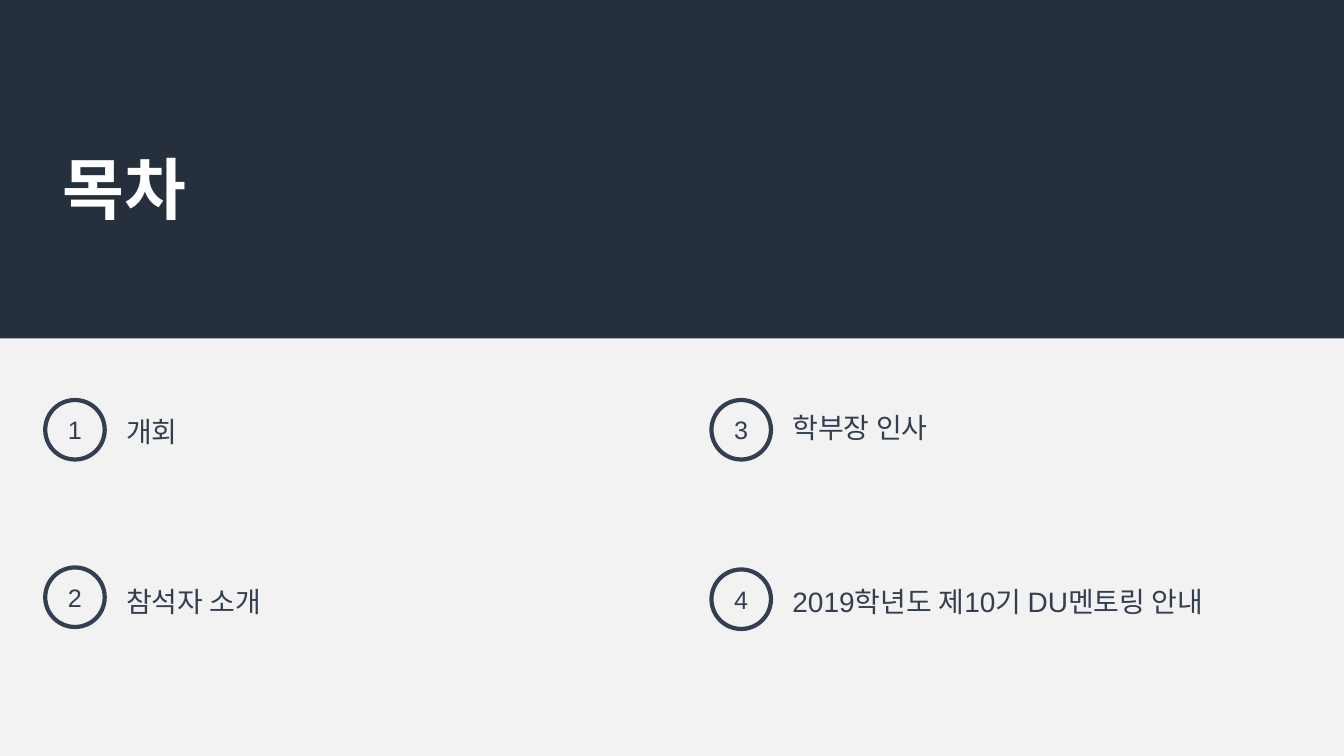
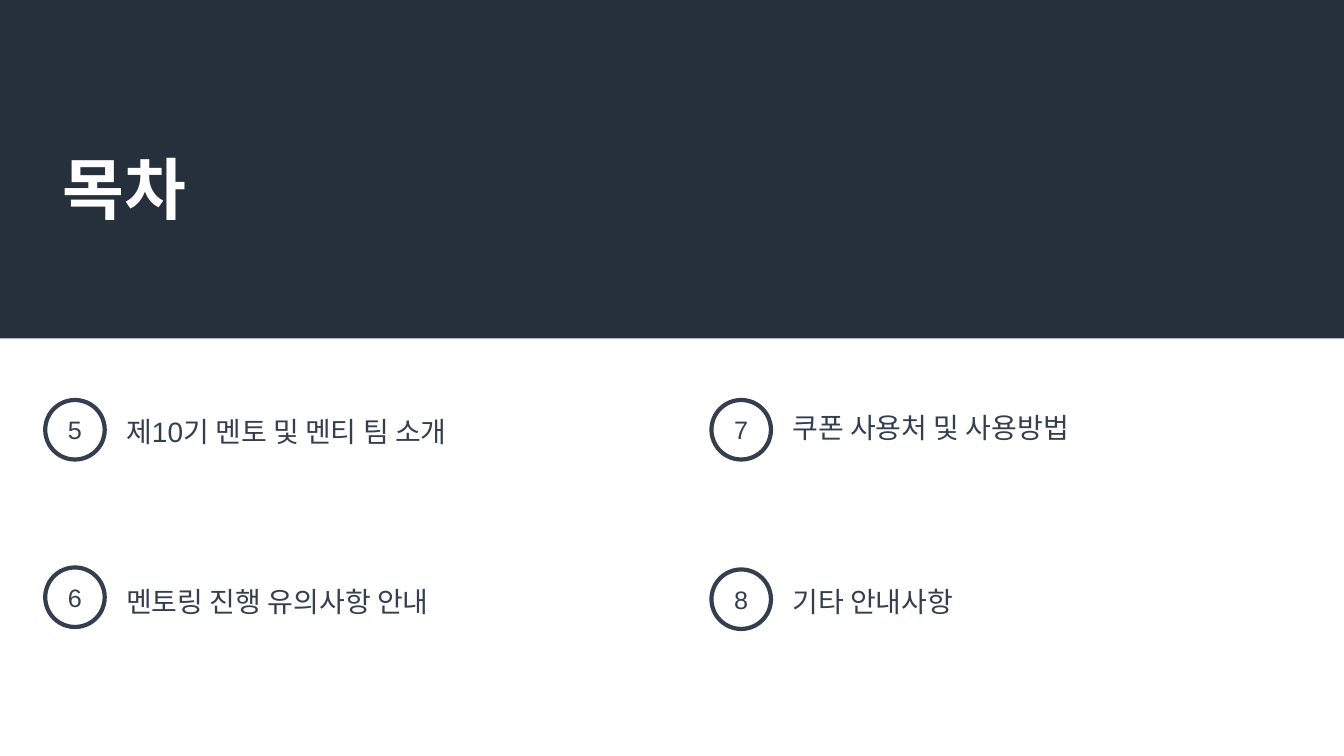
from dataclasses import dataclass

from pptx import Presentation
from pptx.dml.color import RGBColor
from pptx.enum import shapes, text
from pptx.util import Cm, Pt


@dataclass(frozen=True)
class Theme:
    font: str = "Arial"
    band: RGBColor = RGBColor(0x26, 0x2F, 0x3C)
    ink: RGBColor = RGBColor(0x33, 0x3F, 0x50)
    white: RGBColor = RGBColor(0xFF, 0xFF, 0xFF)
    pale: RGBColor = RGBColor(0xF2, 0xF2, 0xF2)
    title_size: Pt = Pt(48)
    label_size: Pt = Pt(20)
    number_size: Pt = Pt(18)
    ring_width: Pt = Pt(3)


@dataclass(frozen=True)
class Box:
    left: float
    top: float
    width: float
    height: float

    def inner(self, left, top, width, height):
        """Return a box whose left and top are counted from this one."""
        return Box(self.left + left, self.top + top, width, height)

    def lengths(self):
        return Cm(self.left), Cm(self.top), Cm(self.width), Cm(self.height)


THEME = Theme()
PAGE = Box(0, 0, 33.87, 19.05)
HEADER = PAGE.inner(0, 0, PAGE.width, 8.53)
AGENDA = PAGE.inner(0, HEADER.height, PAGE.width, PAGE.height - HEADER.height)

RING_SIZE = 1.5
LABEL_WIDTH, LABEL_HEIGHT = 11.73, 1.12
LABEL_INDENT = 1.79
# Ring left and top within the agenda, then the drop from ring to label.
ENTRY_SLOTS = [
    (1.14, 1.55, 0.23),
    (1.14, 5.77, 0.3),
    (17.93, 1.55, 0.13),
    (17.93, 5.82, 0.25),
]

TITLE = "목차"
AGENDA_PAGES = [
    (THEME.pale, 1,
     ["개회", "참석자 소개", "학부장 인사", "2019학년도 제10기 DU멘토링 안내"]),
    (THEME.white, 5,
     ["제10기 멘토 및 멘티 팀 소개", "멘토링 진행 유의사항 안내",
      "쿠폰 사용처 및 사용방법", "기타 안내사항"]),
]


def write(frame, words, size, color, align=text.PP_ALIGN.LEFT, bold=False):
    frame.text = words
    paragraph = frame.paragraphs[0]
    paragraph.alignment = align
    font = paragraph.font
    font.name, font.size, font.bold = THEME.font, size, bold
    font.color.rgb = color


def add_header(slide, box):
    """Place the dark band behind the slide's title."""
    band = slide.shapes.add_shape(shapes.MSO_SHAPE.RECTANGLE, *box.lengths())
    band.shadow.inherit = False
    band.fill.solid()
    band.fill.fore_color.rgb = THEME.band
    band.line.fill.background()

    title = slide.shapes.title
    title.element.addprevious(band.element)
    title.left, title.top, title.width, title.height = box.inner(
        1.32, 3.58, 31.2, 2.31).lengths()
    frame = title.text_frame
    frame.auto_size = text.MSO_AUTO_SIZE.NONE
    frame.vertical_anchor = text.MSO_ANCHOR.TOP
    write(frame, TITLE, THEME.title_size, THEME.white, bold=True)


def add_entry(slide, box, number, words, label_drop):
    """Place a ringed number at the box's left and its label beside it."""
    ring = slide.shapes.add_shape(
        shapes.MSO_SHAPE.OVAL, *box.inner(0, 0, RING_SIZE, RING_SIZE).lengths())
    ring.shadow.inherit = False
    ring.fill.background()
    ring.line.color.rgb = THEME.ink
    ring.line.width = THEME.ring_width
    ring.text_frame.vertical_anchor = text.MSO_ANCHOR.MIDDLE
    write(ring.text_frame, str(number), THEME.number_size, THEME.ink,
          align=text.PP_ALIGN.CENTER)

    label = slide.shapes.add_textbox(*box.inner(
        LABEL_INDENT, label_drop, LABEL_WIDTH, LABEL_HEIGHT).lengths())
    label.text_frame.word_wrap = True
    write(label.text_frame, words, THEME.label_size, THEME.ink)


def add_agenda(slide, box, first_number, entries):
    for offset, (words, slot) in enumerate(zip(entries, ENTRY_SLOTS)):
        left, top, label_drop = slot
        entry_box = box.inner(left, top, LABEL_INDENT + LABEL_WIDTH, RING_SIZE)
        add_entry(slide, entry_box, first_number + offset, words, label_drop)


def add_agenda_slide(deck, background, first_number, entries):
    title_only = deck.slide_layouts[5]
    slide = deck.slides.add_slide(title_only)
    slide.background.fill.solid()
    slide.background.fill.fore_color.rgb = background
    add_header(slide, HEADER)
    add_agenda(slide, AGENDA, first_number, entries)


def main():
    deck = Presentation()
    deck.slide_width, deck.slide_height = Cm(PAGE.width), Cm(PAGE.height)
    for background, first_number, entries in AGENDA_PAGES:
        add_agenda_slide(deck, background, first_number, entries)
    deck.save("out.pptx")


if __name__ == "__main__":
    main()
